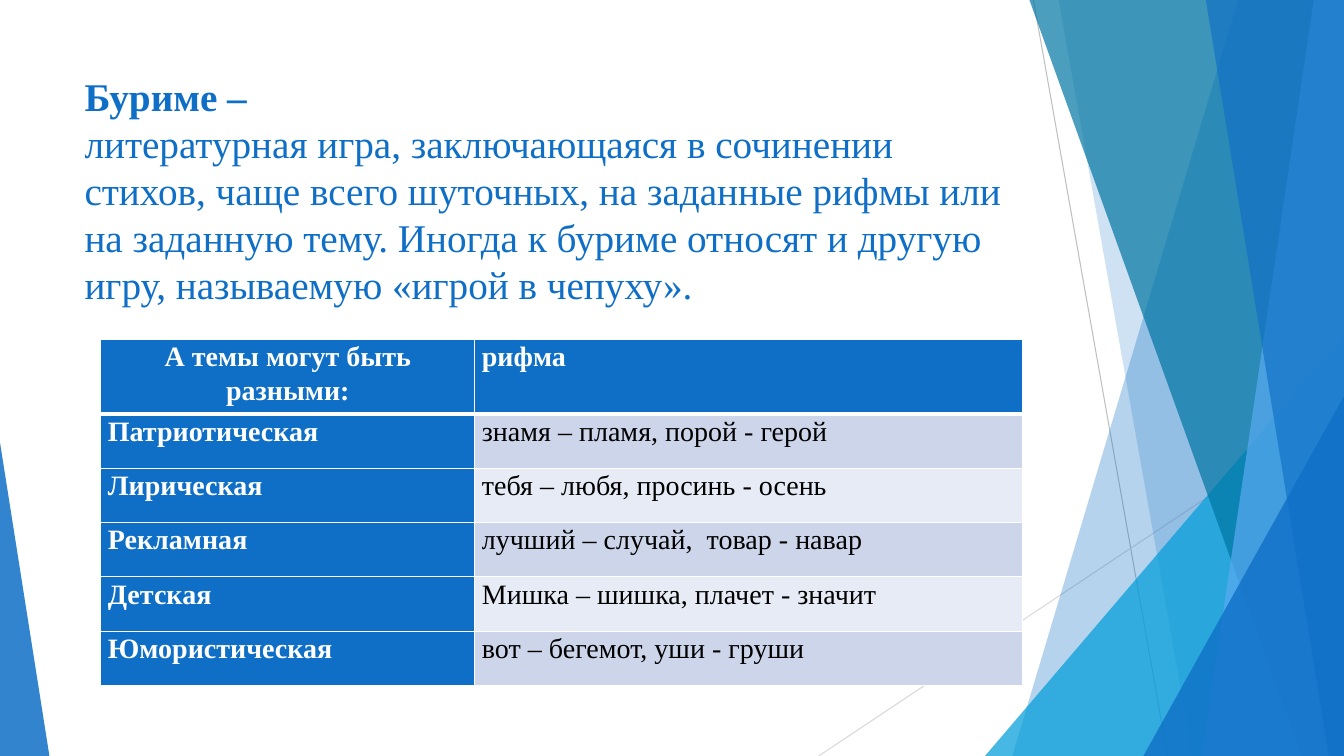
from lxml import etree
from pptx import Presentation
from pptx.dml.color import RGBColor
from pptx.enum.shapes import MSO_CONNECTOR, MSO_SHAPE
from pptx.enum.text import MSO_ANCHOR, PP_ALIGN
from pptx.oxml.ns import qn
from pptx.util import Inches, Pt

COLORS = {
    "blue": "0F6FC6", "sky": "009DD9", "teal": "0076A3", "light": "59AAF2",
    "white": "FFFFFF", "black": "000000", "band_dark": "CCD5EA",
    "band_light": "E7EBF5", "line_dark": "BFBFBF", "line_light": "D9D9D9",
}
FONT = "Times New Roman"
WIDTH, HEIGHT = 13.33, 7.5

TERM = "Буриме –"
DEFINITION = (
    "литературная игра, заключающаяся в сочинении стихов, чаще всего шуточных, "
    "на заданные рифмы или на заданную тему. Иногда к буриме относят и другую "
    "игру, называемую «игрой в чепуху»."
)
ROWS = [
    ("А темы могут быть разными:", "рифма"),
    ("Патриотическая", "знамя – пламя, порой - герой"),
    ("Лирическая", "тебя – любя, просинь - осень"),
    ("Рекламная", "лучший – случай,  товар - навар"),
    ("Детская", "Мишка – шишка, плачет - значит"),
    ("Юмористическая", "вот – бегемот, уши - груши"),
]


def rgb(name):
    return RGBColor.from_string(COLORS[name])


def format_run(run, size, color, bold):
    run.font.name = FONT
    run.font.size = Pt(size)
    run.font.bold = bold
    run.font.color.rgb = rgb(color)


def paint(shape, color, opacity):
    """Fill a shape with a see-through colour, without outline or shadow."""
    shape.shadow.inherit = False
    shape.line.fill.background()
    shape.fill.solid()
    shape.fill.fore_color.rgb = rgb(color)
    color_element = shape.fill._xPr.find(qn("a:solidFill"))[0]
    etree.SubElement(color_element, qn("a:alpha")).set("val", str(opacity * 1000))


def add_ray(slide, start, end, color):
    line = slide.shapes.add_connector(
        MSO_CONNECTOR.STRAIGHT, *(Inches(value) for value in start + end))
    line.line.color.rgb = rgb(color)
    line.line.width = Pt(0.75)
    etree.SubElement(line._element.spPr, qn("a:effectLst"))


def add_blade(slide, top_left, bottom_left, color, opacity):
    """Add a full-height facet that reaches the right edge of the slide."""
    builder = slide.shapes.build_freeform(
        Inches(top_left), 0, scale=1.0)
    corners = [(WIDTH, 0), (WIDTH, HEIGHT), (bottom_left, HEIGHT)]
    builder.add_line_segments([(Inches(x), Inches(y)) for x, y in corners])
    paint(builder.convert_to_shape(), color, opacity)


def add_corner(slide, left, top, width, apex, color, opacity):
    """Add a right triangle that stands on the bottom edge of the slide."""
    triangle = slide.shapes.add_shape(
        MSO_SHAPE.ISOSCELES_TRIANGLE, Inches(left), Inches(top),
        Inches(width), Inches(HEIGHT - top))
    triangle.adjustments[0] = apex
    paint(triangle, color, opacity)


def add_facets(slide):
    add_ray(slide, (10.25, 0), (11.58, HEIGHT), "line_dark")
    add_ray(slide, (WIDTH, 4.03), (8.12, HEIGHT), "line_light")
    add_blade(slide, 12.28, 10.04, "blue", 30)
    add_blade(slide, 10.5, 11.83, "blue", 20)
    add_corner(slide, 9.77, 3.33, WIDTH - 9.77, 1, "sky", 72)
    add_blade(slide, 10.21, 12.91, "teal", 70)
    add_blade(slide, 13.03, 11.92, "light", 70)
    add_blade(slide, 11.96, 13.18, "blue", 65)
    add_corner(slide, 11.34, 3.93, WIDTH - 11.34, 1, "blue", 80)
    add_corner(slide, 0, 4.39, 0.49, 0, "blue", 85)


def add_definition(slide, left, top, width, height):
    box = slide.shapes.add_textbox(
        Inches(left), Inches(top), Inches(width), Inches(height))
    frame = box.text_frame
    frame.word_wrap = True
    frame.vertical_anchor = MSO_ANCHOR.TOP
    paragraph = frame.paragraphs[0]
    paragraph.text = TERM
    paragraph.add_line_break()
    paragraph.add_run().text = DEFINITION
    for run, bold in zip(paragraph.runs, (True, False)):
        format_run(run, 28, "blue", bold)


def set_borders(cell, is_header):
    properties = cell._tc.get_or_add_tcPr()
    for position, side in enumerate(("lnL", "lnR", "lnT", "lnB")):
        points = 3 if is_header and side == "lnB" else 1
        border = etree.Element(qn(f"a:{side}"), w=str(Pt(points)))
        fill = etree.SubElement(border, qn("a:solidFill"))
        etree.SubElement(fill, qn("a:srgbClr"), val=COLORS["white"])
        properties.insert(position, border)


def format_cell(cell, row, column):
    is_header = row == 0
    is_label = is_header or column == 0
    cell.margin_left = cell.margin_right = Inches(0.07)
    cell.margin_top = cell.margin_bottom = 0
    cell.fill.solid()
    band = "band_dark" if row % 2 else "band_light"
    cell.fill.fore_color.rgb = rgb("blue" if is_label else band)
    set_borders(cell, is_header)
    paragraph = cell.text_frame.paragraphs[0]
    paragraph.line_spacing = 1.07
    if is_header:
        paragraph.alignment = PP_ALIGN.JUSTIFY if column else PP_ALIGN.CENTER
    format_run(paragraph.runs[0], 20, "white" if is_label else "black", is_label)


def add_themes_table(slide, left, top, width, height):
    header_height, label_width = 0.74, 3.71
    table = slide.shapes.add_table(
        len(ROWS), 2, Inches(left), Inches(top), Inches(width), Inches(height)).table
    table.columns[0].width = Inches(label_width)
    table.columns[1].width = Inches(width - label_width)
    row_height = (height - header_height) / (len(ROWS) - 1)
    for row, texts in enumerate(ROWS):
        table.rows[row].height = Inches(row_height if row else header_height)
        for column, text in enumerate(texts):
            cell = table.cell(row, column)
            cell.text_frame.text = text
            format_cell(cell, row, column)


def main():
    presentation = Presentation()
    presentation.slide_width = Inches(WIDTH)
    presentation.slide_height = Inches(HEIGHT)
    slide = presentation.slides.add_slide(presentation.slide_layouts[6])
    add_facets(slide)
    add_definition(slide, 0.74, 0.67, 9.4, 1.44)
    add_themes_table(slide, 1, 3.37, 9.14, 3.43)
    presentation.save("out.pptx")


if __name__ == "__main__":
    main()
